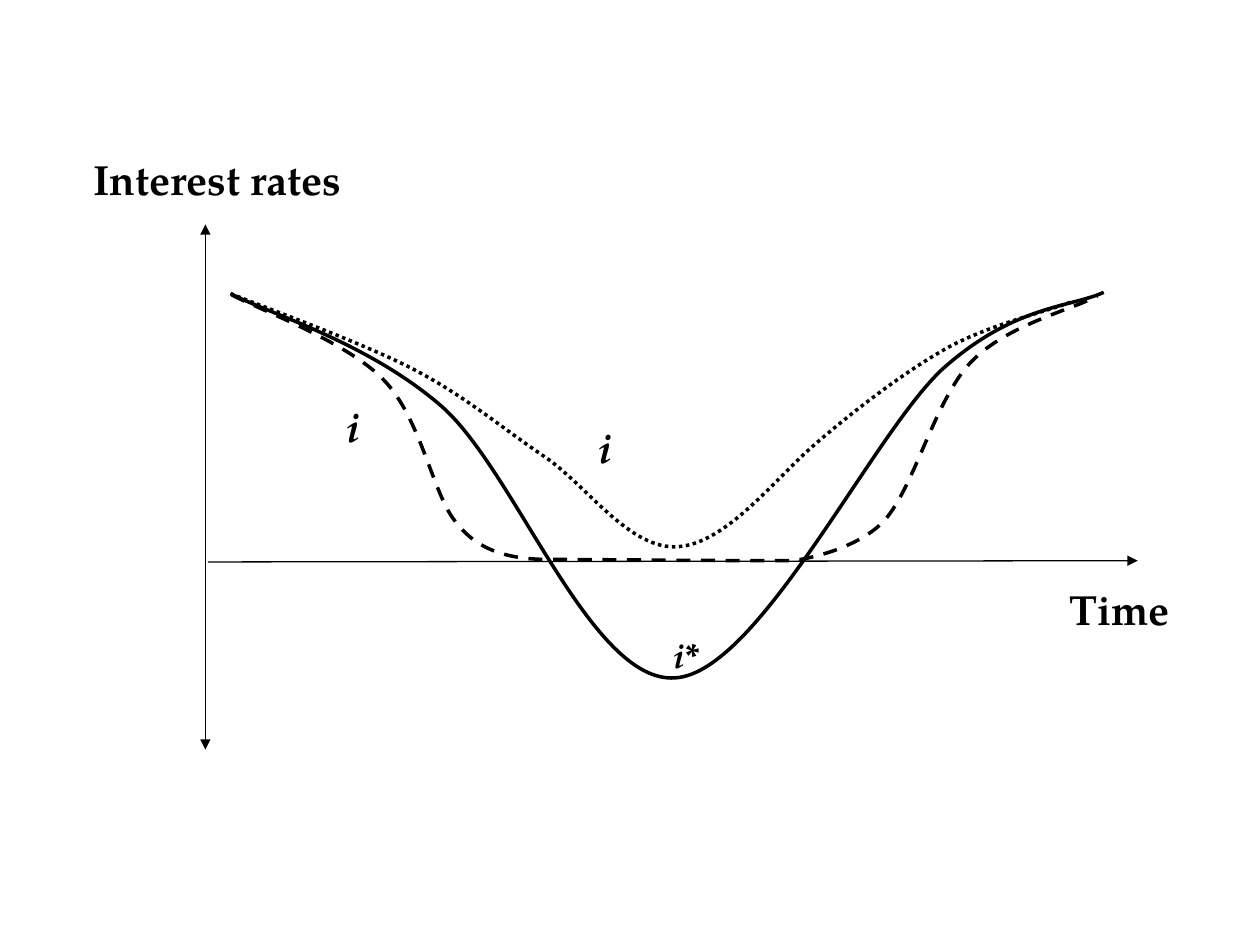
from lxml import etree
from pptx import Presentation
from pptx.dml.color import RGBColor
from pptx.enum.dml import MSO_LINE
from pptx.enum.shapes import MSO_CONNECTOR, MSO_SHAPE
from pptx.enum.text import MSO_ANCHOR, MSO_AUTO_SIZE, PP_ALIGN
from pptx.oxml.ns import qn
from pptx.util import Pt

PX = 9144  # EMU per px, 100 px to the inch
FONT = "TeX Gyre Pagella"
BLACK, WHITE = "000000", "FFFFFF"
STRAIGHT, RECTANGLE = MSO_CONNECTOR.STRAIGHT, MSO_SHAPE.RECTANGLE
JUSTIFY, RIGHT = PP_ALIGN.JUSTIFY, PP_ALIGN.RIGHT
DASH, DOT = MSO_LINE.DASH, MSO_LINE.ROUND_DOT
TOP, FIT_TEXT = MSO_ANCHOR.TOP, MSO_AUTO_SIZE.SHAPE_TO_FIT_TEXT

# Each curve: start point, then two control points and an end point per segment
NATURAL_RATE = [
    (183, 233),
    (211, 248), (291, 271), (350, 322),
    (409, 373), (469, 543), (536, 538),
    (602, 534), (692, 345), (748, 293),
    (805, 242), (850, 244), (876, 232),
]
ZERO_BOUND_RATE = [
    (184, 234),
    (204, 245), (275, 271), (304, 301),
    (333, 330), (343, 389), (360, 412),
    (376, 434), (398, 444), (436, 444),
    (474, 444), (549, 445), (626, 445),
    (627, 446), (678, 439), (702, 413),
    (726, 386), (742, 317), (771, 287),
    (799, 258), (850, 246), (871, 235),
]
POSITIVE_RATE = [
    (183, 233),
    (207, 243), (285, 271), (326, 292),
    (367, 313), (395, 337), (430, 361),
    (463, 382), (497, 434), (535, 434),
    (573, 434), (611, 385), (643, 356),
    (676, 327), (718, 295), (752, 276),
    (787, 257), (832, 247), (852, 239),
]


def color(hex_string):
    return RGBColor.from_string(hex_string)


def px(*lengths):
    return [length * PX for length in lengths]


def style_line(line, width, dash=None):
    line.color.rgb = color(BLACK)
    line.width = Pt(width)
    if dash is not None:
        line.dash_style = dash


def add_axis(slide, start, end, arrow_ends):
    axis = slide.shapes.add_connector(STRAIGHT, *px(*start, *end))
    style_line(axis.line, 0.75)
    properties = axis._element.spPr
    outline = properties.find(qn("a:ln"))
    for arrow_end in arrow_ends:
        etree.SubElement(outline, qn(f"a:{arrow_end}"), type="triangle")
    etree.SubElement(properties, qn("a:effectLst"))


def add_curve(slide, points, dash=None):
    builder = slide.shapes.build_freeform(*points[0], scale=PX)
    builder.add_line_segments(points[1:], close=False)
    curve = builder.convert_to_shape()
    # Turn every three straight segments into one Bezier segment
    segments = list(curve._element.iter(qn("a:lnTo")))
    for first in range(0, len(segments), 3):
        bezier = etree.Element(qn("a:cubicBezTo"))
        segments[first].addprevious(bezier)
        for segment in segments[first:first + 3]:
            bezier.append(segment[0])
            segment.getparent().remove(segment)
    curve.fill.background()
    curve.shadow.inherit = False
    style_line(curve.line, 2, dash)


def write_label(shape, text, size=24, italic=False, align=JUSTIFY, fit=True):
    frame = shape.text_frame
    frame.text = text
    frame.word_wrap = True
    frame.vertical_anchor = TOP
    if fit:
        frame.auto_size = FIT_TEXT
    paragraph = frame.paragraphs[0]
    paragraph.alignment = align
    font = paragraph.runs[0].font
    font.name, font.size = FONT, Pt(size)
    font.bold, font.italic = True, italic
    font.color.rgb = color(BLACK)


def add_label(slide, box, text, **style):
    write_label(slide.shapes.add_textbox(*px(*box)), text, **style)


def add_filled_label(slide, box, text, **style):
    shape = slide.shapes.add_shape(RECTANGLE, *px(*box))
    shape.shadow.inherit = False
    shape.fill.solid()
    shape.fill.fore_color.rgb = color(WHITE)
    shape.line.fill.background()
    write_label(shape, text, **style)


def main():
    presentation = Presentation()
    presentation.slide_width, presentation.slide_height = px(1000, 750)
    slide = presentation.slides.add_slide(presentation.slide_layouts[6])

    # Axes
    add_axis(slide, (165, 446), (903, 445), ["tailEnd"])
    add_axis(slide, (163, 178), (163, 595), ["headEnd", "tailEnd"])

    # Interest rate curves
    add_curve(slide, NATURAL_RATE)
    add_curve(slide, ZERO_BOUND_RATE, DASH)
    add_curve(slide, POSITIVE_RATE, DOT)

    # Curve labels
    add_label(slide, (525, 498, 58, 44), "i*", size=20, italic=True)
    add_label(slide, (265, 313, 43, 50), "i", italic=True)
    add_label(slide, (465, 330, 43, 50), "i", italic=True)

    # Axis labels
    add_filled_label(slide, (825, 458, 113, 50), "Time", align=RIGHT)
    add_label(slide, (64, 117, 246, 59), "Interest rates", fit=False)

    presentation.save("out.pptx")


if __name__ == "__main__":
    main()
